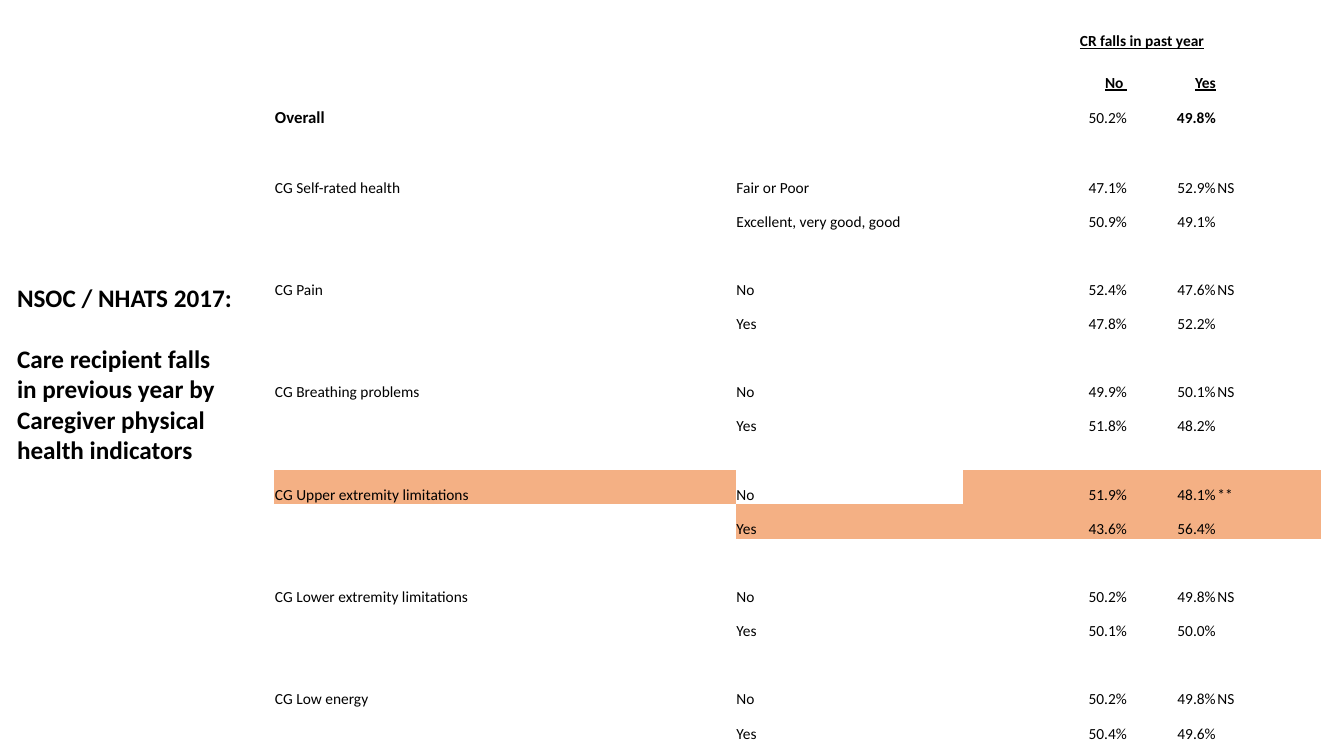
import pptx
import pptx.dml.color
import pptx.enum.text
import pptx.util

Cm = pptx.util.Cm
ALIGN = pptx.enum.text.PP_ALIGN
ANCHOR = pptx.enum.text.MSO_ANCHOR

BLACK = "000000"
HIGHLIGHT = "F4B084"
PLAIN_STYLE = "{2D5ABB26-0587-4C30-8999-92F81FD0307C}"

COLUMN_WIDTHS = (11.63, 5.74, 4.14, 2.24, 2.62)
ROW_HEIGHT = 0.86
TALL_ROW_HEIGHT = 0.89
TALL_ROWS = (2, 3)
NO_COLUMN, YES_COLUMN = 2, 3

# Indicator, significance, then (level, share without falls, share with falls)
INDICATORS = (
    ("CG Self-rated health", "NS",
     ("Fair or Poor", "47.1%", "52.9%"), ("Excellent, very good, good", "50.9%", "49.1%")),
    ("CG Pain", "NS", ("No", "52.4%", "47.6%"), ("Yes", "47.8%", "52.2%")),
    ("CG Breathing problems", "NS", ("No", "49.9%", "50.1%"), ("Yes", "51.8%", "48.2%")),
    ("CG Upper extremity limitations", "**", ("No", "51.9%", "48.1%"), ("Yes", "43.6%", "56.4%")),
    ("CG Lower extremity limitations", "NS", ("No", "50.2%", "49.8%"), ("Yes", "50.1%", "50.0%")),
    ("CG Low energy", "NS", ("No", "50.2%", "49.8%"), ("Yes", "50.4%", "49.6%")),
)
HIGHLIGHTED_CELLS = {(13, 0), (13, 2), (13, 3), (13, 4), (14, 1), (14, 2), (14, 3), (14, 4)}


def color(hex_string):
    return pptx.dml.color.RGBColor.from_string(hex_string)


def set_font(paragraph, size, bold=False, underline=False):
    font = paragraph.font
    font.name = "Calibri"
    font.size = pptx.util.Pt(size)
    font.bold = bold
    font.underline = underline
    font.color.rgb = color(BLACK)


def table_rows():
    rows = [
        ("", "", "CR falls in past year", "", ""),
        ("", "", "No ", "Yes", ""),
        ("Overall", "", "50.2%", "49.8%", ""),
    ]
    for indicator, significance, first, second in INDICATORS:
        rows += [("",) * 5, (indicator, *first, significance), ("", *second, "")]
    return rows


def fill_cell(cell, text, row, column):
    cell.margin_left = cell.margin_right = cell.margin_top = Cm(0.02)
    cell.margin_bottom = 0
    cell.vertical_anchor = ANCHOR.MIDDLE if row == 0 else ANCHOR.BOTTOM
    if (row, column) in HIGHLIGHTED_CELLS:
        cell.fill.solid()
        cell.fill.fore_color.rgb = color(HIGHLIGHT)
    else:
        cell.fill.background()

    paragraph = cell.text_frame.paragraphs[0]
    paragraph.text = text
    if row == 0:
        paragraph.alignment = ALIGN.CENTER
    elif column in (NO_COLUMN, YES_COLUMN):
        paragraph.alignment = ALIGN.RIGHT
    header = row < 2
    overall_bold = row == 2 and column != NO_COLUMN
    set_font(paragraph, 12 if (row, column) == (2, 0) else 11, header or overall_bold, header)


def add_falls_table(slide, left, top):
    rows = table_rows()
    heights = [TALL_ROW_HEIGHT if row in TALL_ROWS else ROW_HEIGHT for row in range(len(rows))]
    table = slide.shapes.add_table(
        len(rows), len(COLUMN_WIDTHS), Cm(left), Cm(top),
        Cm(sum(COLUMN_WIDTHS)), Cm(sum(heights))).table
    table.first_row = table.horz_banding = False
    table._tbl.tblPr[0].text = PLAIN_STYLE
    for column, width in zip(table.columns, COLUMN_WIDTHS):
        column.width = Cm(width)
    for row, (texts, height) in enumerate(zip(rows, heights)):
        table.rows[row].height = Cm(height)
        for column, text in enumerate(texts):
            fill_cell(table.cell(row, column), text, row, column)
    table.cell(0, NO_COLUMN).merge(table.cell(0, len(COLUMN_WIDTHS) - 1))


def add_title(slide, left, top, width, height):
    text_frame = slide.shapes.add_textbox(Cm(left), Cm(top), Cm(width), Cm(height)).text_frame
    text_frame.word_wrap = True
    source, subject = text_frame.paragraphs[0], text_frame.add_paragraph()
    source.text = "NSOC / NHATS 2017:"
    subject.text = ("Care recipient falls in previous year by "
                    "Caregiver physical health indicators")
    subject.space_before = pptx.util.Pt(22)
    for paragraph in (source, subject):
        set_font(paragraph, 18, bold=True)


def main():
    presentation = pptx.Presentation()
    presentation.slide_width = Cm(33.87)
    presentation.slide_height = Cm(19.05)
    slide = presentation.slides.add_slide(presentation.slide_layouts[6])
    add_falls_table(slide, 6.91, 0.61)
    add_title(slide, 0.18, 6.99, 5.94, 4.88)
    presentation.save("out.pptx")


if __name__ == "__main__":
    main()
